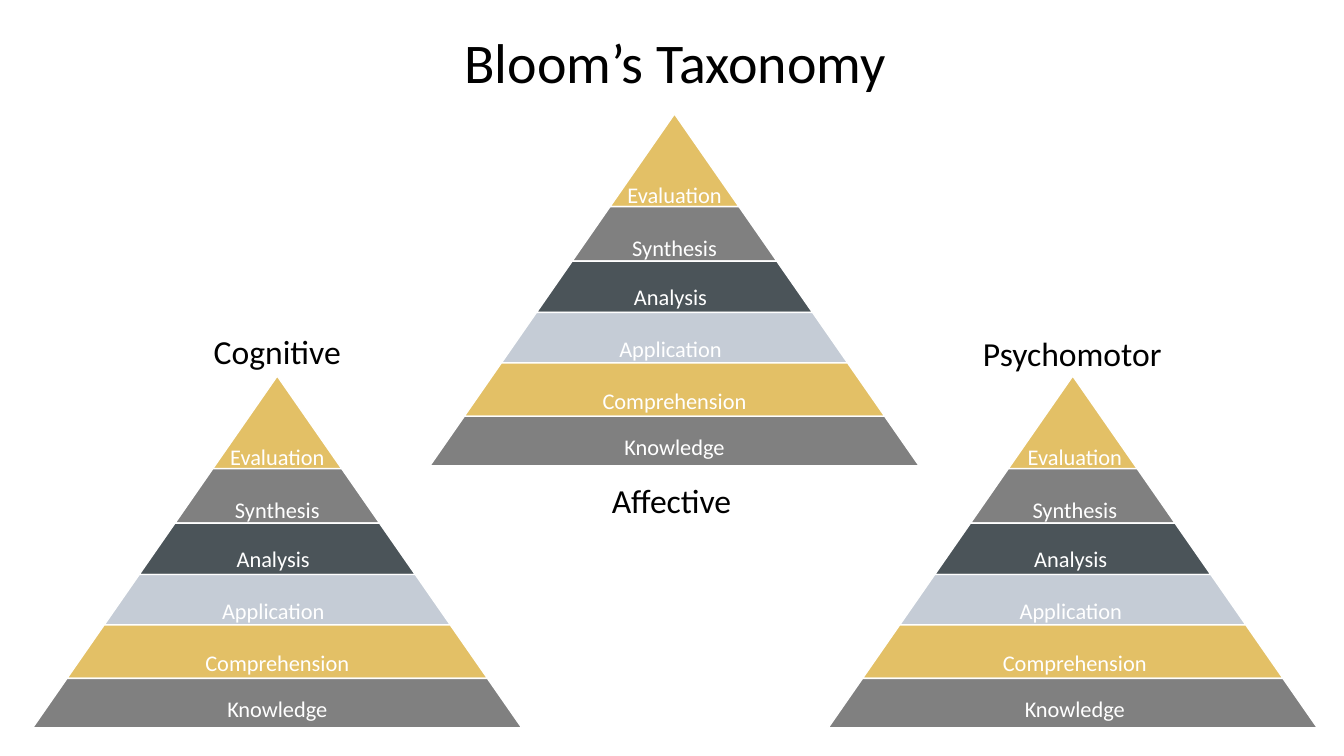
from pptx import Presentation, util as u
from pptx.dml.color import RGBColor
from pptx.enum import shapes, text

THEME = {
    "font": "Calibri",
    "gold": "E3C066", "gray": "808080", "slate": "4B5459", "mist": "C5CCD6",
    "white": "FFFFFF", "black": "000000",
    "title": 40, "domain": 24, "level": 16, "rule": 1,
}
SLOPE = 0.695  # half width gained per inch of height

# name, colour, band bottom, then label shift, top and width; all from the apex
LEVELS = [
    ("Evaluation", "gold", 0.92, 0, 0.62, 1.22),
    ("Synthesis", "gray", 1.46, 0, 1.14, 1.17),
    ("Analysis", "slate", 1.97, -0.04, 1.63, 1.23),
    ("Application", "mist", 2.47, -0.04, 2.15, 2.29),
    ("Comprehension", "gold", 3.0, 0, 2.66, 2.19),
    ("Knowledge", "gray", 3.49, 0, 3.12, 1.92),
]

# name, apex x and y, label centre, then name box: left, top, width
DOMAINS = [
    ("Cognitive", 2.75, 3.73, 2.75, 1.93, 3.23, 1.64),
    ("Affective", 6.69, 1.13, 6.69, 5.84, 4.71, 1.64),
    ("Psychomotor", 10.64, 3.73, 10.66, 9.53, 3.25, 2.21),
]

deck = Presentation()
deck.slide_width, deck.slide_height = u.Inches(13.33), u.Inches(7.5)
slide = deck.slides.add_slide(deck.slide_layouts[6])


def color(name):
    return RGBColor.from_string(THEME[name])


def write(words, left, top, width, height, size, ink):
    """Add a centred one-line text box."""
    box = slide.shapes.add_textbox(*map(u.Inches, (left, top, width, height)))
    frame = box.text_frame
    frame.word_wrap = True
    frame.auto_size = text.MSO_AUTO_SIZE.SHAPE_TO_FIT_TEXT
    line = frame.paragraphs[0]
    line.alignment = text.PP_ALIGN.CENTER
    run = line.add_run()
    run.text = words
    style = {"name": THEME["font"], "size": u.Pt(THEME[size])}
    for key, value in style.items():
        setattr(run.font, key, value)
    run.font.color.rgb = color(ink)


for domain, apex, peak, center, left, top, width in DOMAINS:
    group = slide.shapes.add_group_shape()
    start = 0
    for level, fill, end, *rest in LEVELS:
        half = SLOPE * end
        band = group.shapes.add_shape(
            shapes.MSO_SHAPE.TRAPEZOID,
            u.Inches(apex - half), u.Inches(peak + start),
            u.Inches(2 * half), u.Inches(end - start))
        band.adjustments[0] = SLOPE
        band.shadow.inherit = False
        band.fill.solid()
        band.fill.fore_color.rgb = color(fill)
        band.line.color.rgb = color("white")
        band.line.width = u.Pt(THEME["rule"])
        start = end

    for level, fill, end, shift, drop, wide in LEVELS:
        write(level, center + shift - wide / 2, peak + drop, wide, 0.37, "level", "white")
    write(domain, left, top, width, 0.5, "domain", "black")

write("Bloom’s Taxonomy", 4.12, 0.22, 5.15, 0.77, "title", "black")

deck.save("out.pptx")
